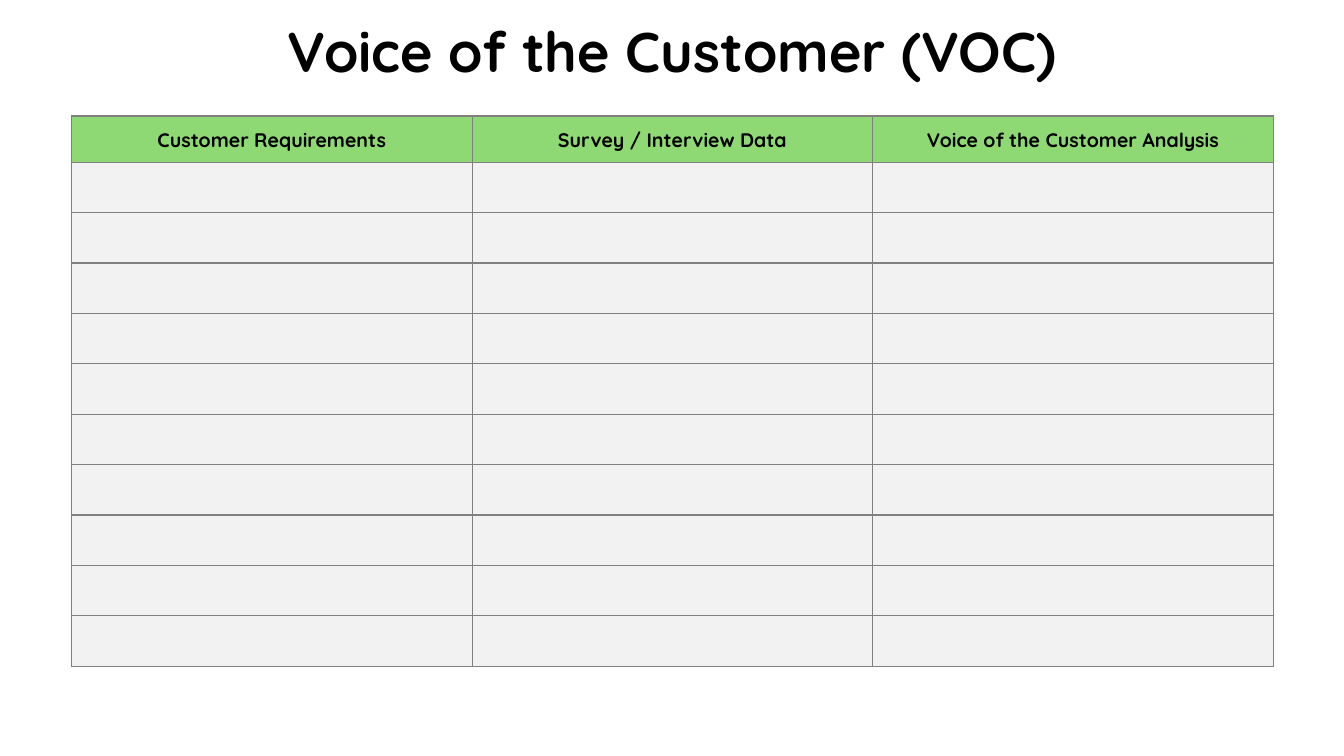
from dataclasses import dataclass

from lxml.etree import SubElement
from pptx import Presentation
from pptx.dml.color import RGBColor
from pptx.enum.text import MSO_ANCHOR as Anchor, PP_ALIGN as Align
from pptx.oxml.ns import qn
from pptx.util import Inches, Pt


@dataclass(frozen=True)
class Theme:
    """Colours, font and type sizes of the slide."""
    font: str = "Quicksand"
    ink: str = "000000"
    header: str = "8ED973"
    body: str = "F2F2F2"
    border: str = "808080"
    border_width: float = 1
    title_size: float = 40
    header_size: float = 14


THEME = Theme()
HEADINGS = (
    "Customer Requirements",
    "Survey / Interview Data",
    "Voice of the Customer Analysis",
)
ENTRY_ROWS = 10
HEADER_HEIGHT = 0.46
ENTRY_HEIGHT = 0.5


def write_text(frame, text, size, spacing):
    """Write one bold, centred line into a text frame."""
    frame.text = text
    para = frame.paragraphs[0]
    para.alignment = Align.CENTER
    para.line_spacing = spacing
    font = para.runs[0].font
    font.name = THEME.font
    font.size = Pt(size)
    font.bold = True
    font.color.rgb = RGBColor.from_string(THEME.ink)


def style_cell(cell, colour):
    """Give a cell thin borders on all sides and a solid fill."""
    properties = cell._tc.get_or_add_tcPr()
    for side in ("a:lnL", "a:lnR", "a:lnT", "a:lnB"):
        line = SubElement(properties, qn(side), w=str(Pt(THEME.border_width)))
        fill = SubElement(line, qn("a:solidFill"))
        SubElement(fill, qn("a:srgbClr"), val=THEME.border)
    cell.fill.solid()
    cell.fill.fore_color.rgb = RGBColor.from_string(colour)


def add_title(page, left, top, width, height):
    """Add the slide title, centred in its box."""
    box = page.shapes.add_textbox(Inches(left), Inches(top), Inches(width), Inches(height))
    frame = box.text_frame
    frame.word_wrap = True
    frame.vertical_anchor = Anchor.MIDDLE
    write_text(frame, "Voice of the Customer (VOC)", THEME.title_size, 0.9)


def add_voice_table(page, left, top, width):
    """Add the table of headings above empty entry rows."""
    height = HEADER_HEIGHT + ENTRY_ROWS * ENTRY_HEIGHT
    table = page.shapes.add_table(
        ENTRY_ROWS + 1, len(HEADINGS),
        Inches(left), Inches(top), Inches(width), Inches(height),
    ).table
    table.horz_banding = False
    for column in table.columns:
        column.width = Inches(width / len(HEADINGS))
    for index, row in enumerate(table.rows):
        row.height = Inches(ENTRY_HEIGHT if index else HEADER_HEIGHT)
        for cell in row.cells:
            style_cell(cell, THEME.body if index else THEME.header)
    for cell, heading in zip(table.rows[0].cells, HEADINGS):
        cell.vertical_anchor = Anchor.MIDDLE
        cell.margin_left = cell.margin_right = Inches(0.1)
        cell.margin_top = cell.margin_bottom = Inches(0.1)
        write_text(cell.text_frame, heading, THEME.header_size, 1.07)


def main():
    """Build the slide and save the deck."""
    deck = Presentation()
    deck.slide_width = Inches(13.33)
    deck.slide_height = Inches(7.5)
    page = deck.slides.add_slide(deck.slide_layouts[6])
    add_title(page, 2.34, 0, 8.65, 1.08)
    add_voice_table(page, 0.71, 1.15, 11.92)
    deck.save("out.pptx")


if __name__ == "__main__":
    main()
